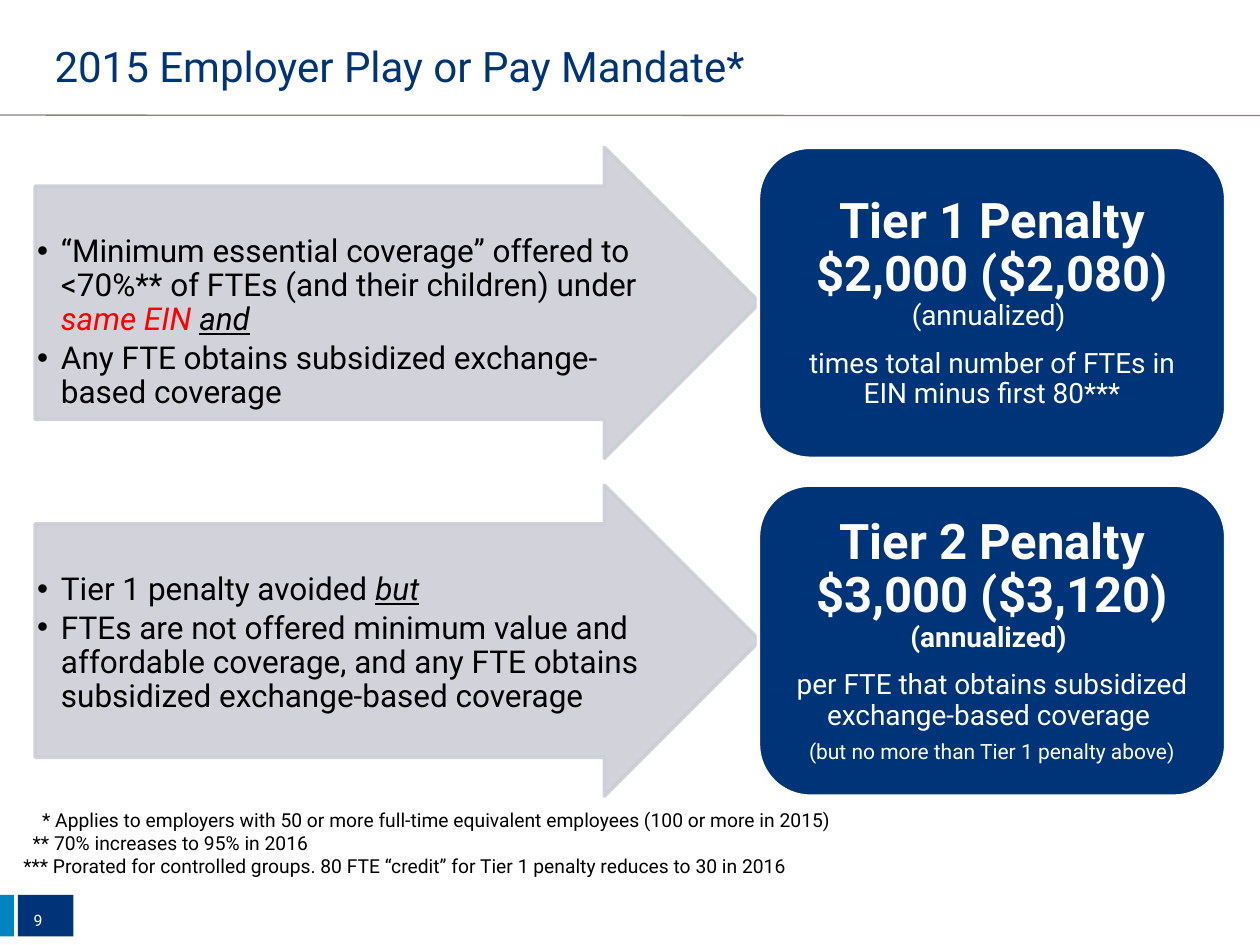
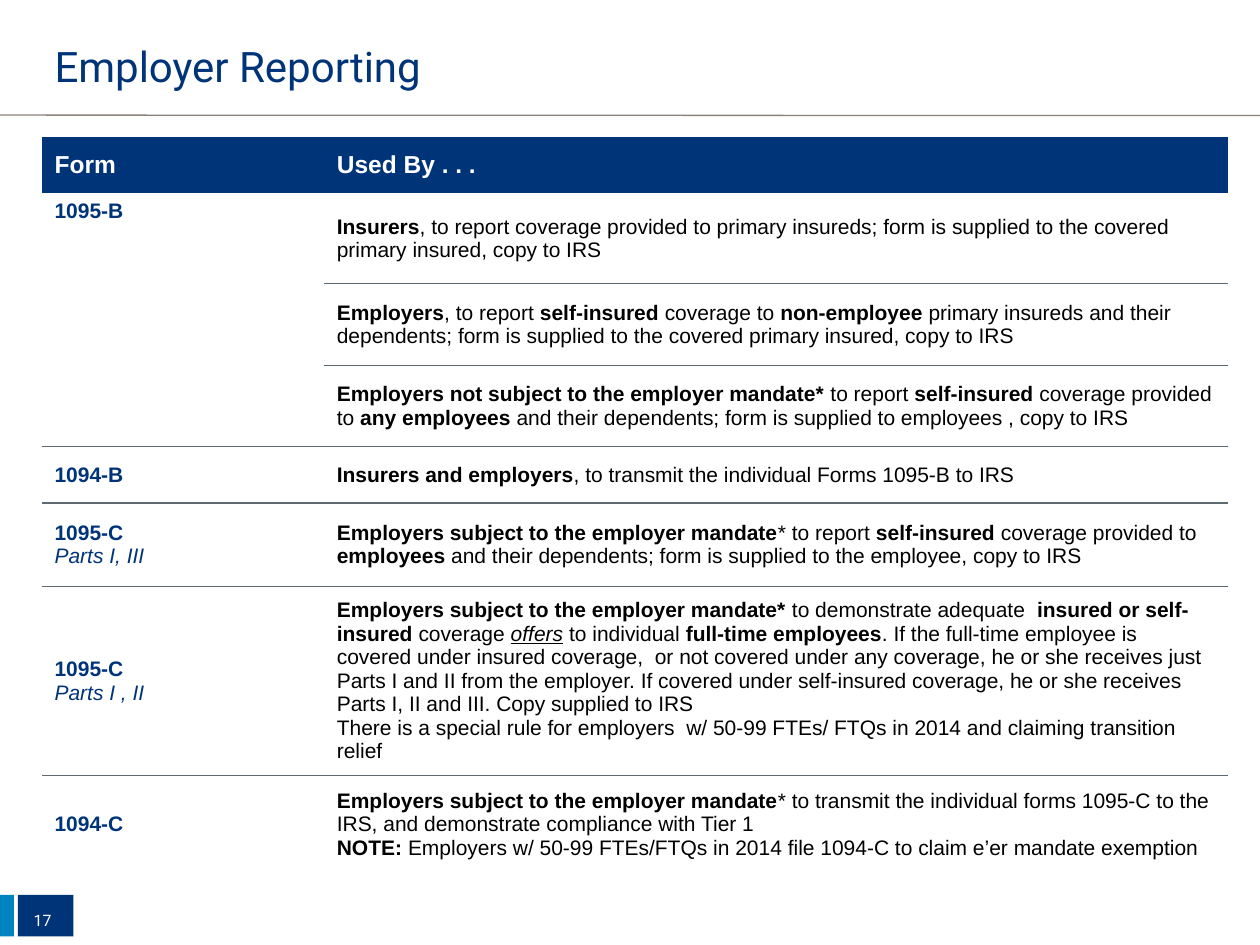
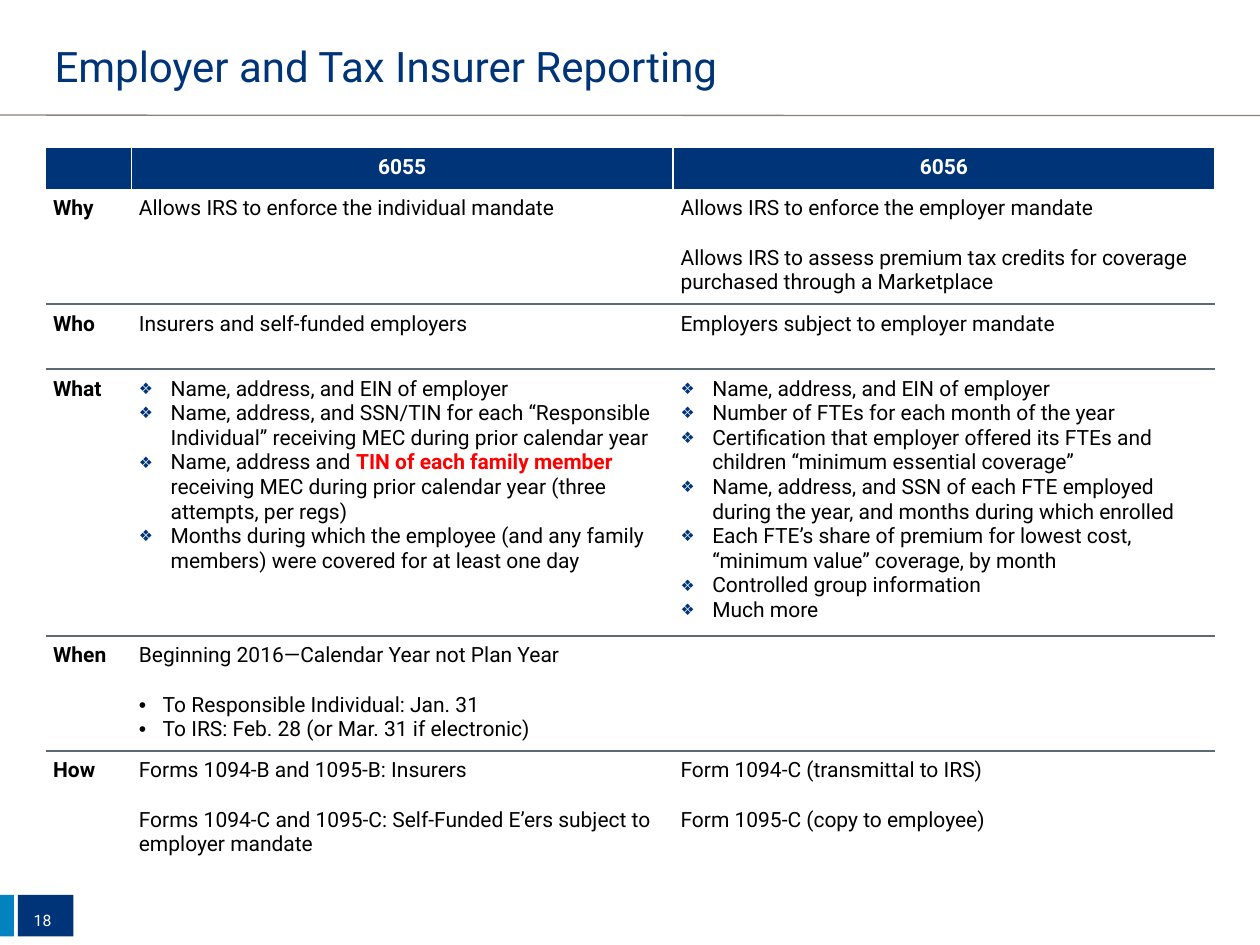
from dataclasses import dataclass, field
from typing import Any, NamedTuple, Optional

from lxml.etree import SubElement
from pptx import Presentation
from pptx.dml.color import RGBColor
from pptx.enum.shapes import MSO_CONNECTOR, MSO_SHAPE
from pptx.enum.text import MSO_ANCHOR, PP_ALIGN
from pptx.oxml.ns import qn
from pptx.util import Cm, Pt

NAVY, BLUE, GREY, TAUPE, SLATE = "003478", "0083BE", "CCCED6", "8D817B", "5E6A71"
WHITE, BLACK, RED = "FFFFFF", "000000", "FF0000"
HEADING_FONT = "Roboto"
TABLE_FONT = "Arial"
NO_TABLE_STYLE = "{2D5ABB26-0587-4C30-8999-92F81FD0307C}"
BLANK_LINE = Pt(14)

BOLD = {"bold": True}
ITALIC = {"italic": True}
UNDERLINED = {"italic": True, "underline": True}


class Box(NamedTuple):
    left: float
    top: float
    width: float
    height: float


class Bullet(NamedTuple):
    character: str
    indent: float
    color: Optional[str] = None
    percent: int = 100


@dataclass(frozen=True)
class Run:
    text: str
    style: dict[str, Any] = field(default_factory=dict)


@dataclass(frozen=True)
class Paragraph:
    runs: list[Run]
    layout: dict[str, Any] = field(default_factory=dict)
    bullet: Optional[Bullet] = None
    left: float = 0


@dataclass(frozen=True)
class TableDesign:
    box: Box
    columns: list[float]
    rows: list[float]
    margins: tuple[float, float]
    anchor: MSO_ANCHOR
    font: str
    header: dict[str, Any]
    header_sides: bool = False


@dataclass(frozen=True)
class Tier:
    conditions: list[Paragraph]
    penalty: list[Paragraph]


DIAMOND = Bullet("❖", 0.64, NAVY, 75)
DOT = Bullet("•", 0.48)


def rgb(color: str) -> RGBColor:
    return RGBColor.from_string(color)


def line(text: str, bullet: Optional[Bullet] = None, left: float = 0,
         layout: Optional[dict[str, Any]] = None, **style: Any) -> Paragraph:
    return Paragraph([Run(text, style)], layout or {}, bullet, left)


def mixed(*parts: Any, bullet: Optional[Bullet] = None,
          layout: Optional[dict[str, Any]] = None) -> Paragraph:
    runs = [Run(part) if isinstance(part, str) else Run(*part) for part in parts]
    return Paragraph(runs, layout or {}, bullet)


def apply_format(target: Any, values: dict[str, Any]) -> None:
    for name, value in values.items():
        if name == "color":
            target.color.rgb = rgb(value)
        else:
            setattr(target, name, value)


def margins(horizontal: float, vertical: float) -> dict[str, Any]:
    return {"margin_left": Cm(horizontal), "margin_right": Cm(horizontal),
            "margin_top": Cm(vertical), "margin_bottom": Cm(vertical)}


def add_bullet(properties: Any, bullet: Bullet) -> None:
    properties.set("marL", str(Cm(bullet.indent)))
    properties.set("indent", str(-Cm(bullet.indent)))
    if bullet.color:
        color = SubElement(properties, qn("a:buClr"))
        SubElement(color, qn("a:srgbClr"), val=bullet.color)
    SubElement(properties, qn("a:buSzPct"), val=str(bullet.percent * 1000))
    SubElement(properties, qn("a:buFont"), typeface="Arial")
    SubElement(properties, qn("a:buChar"), char=bullet.character)


def write_text(frame: Any, content: list[Paragraph], base: dict[str, Any]) -> None:
    for index, item in enumerate(content):
        paragraph = frame.add_paragraph() if index else frame.paragraphs[0]
        apply_format(paragraph, item.layout)
        properties = paragraph._p.get_or_add_pPr()
        if item.bullet:
            add_bullet(properties, item.bullet)
        elif item.left:
            properties.set("marL", str(Cm(item.left)))
        for part in item.runs:
            for row, text in enumerate(part.text.split("\n")):
                if row:
                    paragraph.add_line_break()
                run = paragraph.add_run()
                run.text = text
                apply_format(run.font, base | part.style)
    for paragraph in frame.paragraphs:
        ending = SubElement(paragraph._p, qn("a:endParaRPr"), sz=str(int(base["size"].pt * 100)))
        SubElement(ending, qn("a:latin"), typeface=base["name"])


def add_text(slide: Any, box: Box, content: list[Paragraph], base: dict[str, Any],
             anchor: MSO_ANCHOR = MSO_ANCHOR.TOP) -> Any:
    frame = slide.shapes.add_textbox(*map(Cm, box)).text_frame
    apply_format(frame, {"word_wrap": True, "vertical_anchor": anchor})
    write_text(frame, content, {"name": HEADING_FONT} | base)
    return frame


def add_block(slide: Any, kind: MSO_SHAPE, box: Box, fill: str,
              outline: Optional[str] = None) -> Any:
    shape = slide.shapes.add_shape(kind, *map(Cm, box))
    shape.shadow.inherit = False
    shape.fill.solid()
    shape.fill.fore_color.rgb = rgb(fill)
    if outline:
        apply_format(shape.line, {"color": outline, "width": Pt(2)})
    else:
        shape.line.fill.background()
    return shape


def start_slide(presentation: Any, title: str, number: int) -> Any:
    slide = presentation.slides.add_slide(presentation.slide_layouts[6])
    add_block(slide, MSO_SHAPE.RECTANGLE, Box(0.36, 18.04, 1.12, 0.84), NAVY)
    add_block(slide, MSO_SHAPE.RECTANGLE, Box(0, 18.04, 0.28, 0.84), BLUE)
    rule = slide.shapes.add_connector(
        MSO_CONNECTOR.STRAIGHT, Cm(0), Cm(2.32), Cm(25.4), Cm(2.33))
    apply_format(rule.line, {"color": TAUPE, "width": Pt(0.75)})
    SubElement(rule._element.spPr, qn("a:effectLst"))
    add_text(slide, Box(0.85, 0.54, 23.29, 1.57), [line(title)],
             {"size": Pt(24), "color": NAVY}, MSO_ANCHOR.MIDDLE)
    add_text(slide, Box(0.43, 18.05, 1.07, 1.02), [line(str(number))],
             {"size": Pt(9), "color": WHITE}, MSO_ANCHOR.MIDDLE)
    return slide


def add_tier(slide: Any, tier: Tier, top: float) -> None:
    arrow = add_block(slide, MSO_SHAPE.RIGHT_ARROW, Box(0.71, top, 14.61, 6.27), GREY, GREY)
    arrow.adjustments[0], arrow.adjustments[1] = 0.75, 0.5
    for color in arrow._element.spPr.iter(qn("a:srgbClr")):
        SubElement(color, qn("a:alpha"), val="90000")
    conditions = add_text(slide, Box(0.72, top + 1.75, 12.27, 3.74), tier.conditions,
                          {"size": Pt(18), "color": BLACK})
    apply_format(conditions, margins(0.03, 0.03))

    card = add_block(slide, MSO_SHAPE.ROUNDED_RECTANGLE, Box(15.29, top, 9.42, 6.27), NAVY, WHITE)
    apply_format(card.text_frame, margins(0.3, 0.15) | {
        "word_wrap": True, "vertical_anchor": MSO_ANCHOR.MIDDLE})
    write_text(card.text_frame, tier.penalty,
               {"name": HEADING_FONT, "size": Pt(16), "color": WHITE})


def add_border(cell: Any, side: str, color: str) -> None:
    properties = cell._tc.get_or_add_tcPr()
    border = properties.makeelement(qn(f"a:{side}"), {"w": str(Pt(1))})
    fill = SubElement(border, qn("a:solidFill"))
    SubElement(fill, qn("a:srgbClr"), val=color)
    properties.insert(len(properties.findall("*")) - 1, border)


def add_table(slide: Any, design: TableDesign, cells: list[list[list[Paragraph]]],
              merged: tuple[tuple[int, int], tuple[int, int]]) -> Any:
    table = slide.shapes.add_table(
        len(design.rows), len(design.columns), *map(Cm, design.box)).table
    apply_format(table, {"first_row": False, "horz_banding": False})
    table._tbl.tblPr.find(qn("a:tableStyleId")).text = NO_TABLE_STYLE
    for column, width in zip(table.columns, design.columns):
        column.width = Cm(width)
    for row, height in zip(table.rows, design.rows):
        row.height = Cm(height)
    first, last = merged
    table.cell(*first).merge(table.cell(*last))
    body = {"name": design.font, "size": Pt(12), "color": BLACK}
    for row_index, row in enumerate(cells):
        for column_index, content in enumerate(row):
            cell = table.cell(row_index, column_index)
            header = row_index == 0
            write_text(cell.text_frame, content, body | design.header if header else body)
            if cell.is_spanned:
                continue
            apply_format(cell, margins(*design.margins) | {"vertical_anchor": design.anchor})
            cell.fill.solid()
            cell.fill.fore_color.rgb = rgb(NAVY if header else WHITE)
            if header and design.header_sides:
                for side in ("lnL", "lnR", "lnT"):
                    add_border(cell, side, WHITE)
            elif row_index > 1:
                add_border(cell, "lnT", SLATE)
    return table


def condition(*parts: Any) -> Paragraph:
    return mixed(*parts, bullet=DOT, layout={
        "alignment": PP_ALIGN.LEFT, "line_spacing": 0.9, "space_after": Pt(2.5)})


def penalty(*parts: Any, after: float = 0) -> Paragraph:
    return mixed(*parts, layout={
        "alignment": PP_ALIGN.CENTER, "line_spacing": 0.9, "space_after": Pt(after)})


def build_mandate(presentation: Any) -> None:
    slide = start_slide(presentation, "2015 Employer Play or Pay Mandate*", 9)
    amount = BOLD | {"size": Pt(28)}
    tiers = [
        Tier([condition("“Minimum essential coverage” offered to <70%** of FTEs "
                        "(and their children) under ",
                        ("same EIN ", ITALIC | {"color": RED}), ("and", UNDERLINED)),
              condition("Any FTE obtains subsidized exchange-based coverage")],
             [penalty(("Tier 1 Penalty\n$2,000 ($2,080)\n", amount), "(annualized) ", after=9.8),
              penalty("times total number of FTEs in EIN minus first 80***")]),
        Tier([condition("Tier 1 penalty avoided ", ("but", UNDERLINED)),
              condition("FTEs are not offered minimum value and affordable coverage, "
                        "and any FTE obtains subsidized exchange-based coverage")],
             [penalty(("Tier 2 Penalty\n$3,000 ($3,120)\n", amount),
                      ("(annualized) ", BOLD), after=9.8),
              penalty("per FTE that obtains subsidized exchange-based coverage ", after=5.6),
              penalty(("(but no more than Tier 1 penalty above)", {"size": Pt(12)}))]),
    ]
    for index, tier in enumerate(tiers):
        add_tier(slide, tier, 2.97 + index * 6.81)
    add_text(slide, Box(0.22, 16.16, 20.52, 1.68), [
        line("* Applies to employers with 50 or more full-time equivalent employees "
             "(100 or more in 2015)", left=0.38),
        line("** 70% increases to 95% in 2016", left=0.19),
        line("*** Prorated for controlled groups. 80 FTE “credit” for Tier 1 penalty "
             "reduces to 30 in 2016"),
    ], {"size": Pt(11), "color": BLACK})


def form(name: str, parts: str = "") -> list[Paragraph]:
    name_line = line(name, bold=True, color=NAVY)
    return [name_line, line(parts, italic=True, color=NAVY)] if parts else [name_line]


def build_forms(presentation: Any) -> None:
    slide = start_slide(presentation, "Employer Reporting", 17)
    design = TableDesign(
        Box(0.85, 2.76, 23.9, 14.66), [5.69, 18.21],
        [1.14, 1.82, 1.65, 1.63, 1.14, 1.68, 3.63, 1.96],
        (0.25, 0.13), MSO_ANCHOR.MIDDLE, TABLE_FONT,
        BOLD | {"size": Pt(14), "color": WHITE})
    subject = "Employers subject to the employer mandate"
    self_insured = ("self-insured ", BOLD)
    cells = [
        [[line("Form")], [line("Used By . . .")]],
        [form("1095-B"), [mixed(
            ("Insurers", BOLD), ", to report coverage provided to primary insureds; form is "
            "supplied to the covered primary insured, copy to IRS")]],
        [[], [mixed(
            ("Employers", BOLD), ", to report ", self_insured, "coverage to ",
            ("non-employee", BOLD), " primary insureds and their dependents; form is supplied "
            "to the covered primary insured, copy to IRS")]],
        [[], [mixed(
            ("Employers not subject to the employer mandate* ", BOLD), "to report ",
            self_insured, "coverage provided to ", ("any employees ", BOLD),
            "and their dependents; form is supplied to employees , copy to IRS")]],
        [form("1094-B"), [mixed(
            ("Insurers and employers", BOLD),
            ", to transmit the individual Forms 1095-B to IRS")]],
        [form("1095-C", "Parts I, III"), [mixed(
            (subject, BOLD), "* to report ", self_insured, "coverage provided to ",
            ("employees", BOLD), " and their dependents; form is supplied to the employee, "
            "copy to IRS")]],
        [form("1095-C", "Parts I , II"), [
            mixed((subject + "* ", BOLD), "to demonstrate adequate  ",
                  ("insured or self-insured ", BOLD), "coverage ", ("offers", UNDERLINED),
                  " to individual ", ("full-time employees", BOLD),
                  ". If the full-time employee is covered under insured coverage,  or not "
                  "covered under any coverage, he or she receives just Parts I and II from the "
                  "employer. If covered under self-insured coverage, he or she receives "
                  "Parts I, II and III. Copy supplied to IRS"),
            line("There is a special rule for employers  w/ 50-99 FTEs/ FTQs in 2014 and "
                 "claiming transition relief")]],
        [form("1094-C"), [
            mixed((subject, BOLD), "* to transmit the individual forms 1095-C to the IRS, "
                  "and demonstrate compliance with Tier 1"),
            mixed(("NOTE: ", BOLD), "Employers w/ 50-99 FTEs/FTQs in 2014 file 1094-C to "
                  "claim e’er mandate exemption")]],
    ]
    table = add_table(slide, design, cells, ((1, 0), (3, 0)))
    table.cell(1, 0).vertical_anchor = MSO_ANCHOR.TOP


def build_comparison(presentation: Any) -> None:
    slide = start_slide(presentation, "Employer and Tax Insurer Reporting", 18)
    design = TableDesign(
        Box(0.92, 2.97, 23.57, 13.73), [1.73, 10.92, 10.92],
        [0.84, 2.11, 1.31, 5.08, 2.11, 2.11],
        (0.15, 0.15), MSO_ANCHOR.TOP, HEADING_FONT,
        BOLD | {"color": WHITE}, header_sides=True)
    centred = {"alignment": PP_ALIGN.CENTER}
    spaced = {"space_before": BLANK_LINE}
    insurer_items = [
        line("Name, address, and EIN of employer", DIAMOND),
        line("Name, address, and SSN/TIN for each “Responsible Individual” receiving MEC "
             "during prior calendar year", DIAMOND),
        mixed("Name, address and ", ("TIN of each family member ", BOLD | {"color": RED}),
              "receiving MEC during prior calendar year (three attempts, per regs)",
              bullet=DIAMOND),
        line("Months during which the employee (and any family members) were covered for "
             "at least one day", DIAMOND),
    ]
    employer_items = [line(text, DIAMOND) for text in (
        "Name, address, and EIN of employer",
        "Number of FTEs for each month of the year",
        "Certification that employer offered its FTEs and children “minimum essential coverage”",
        "Name, address, and SSN of each FTE employed during the year, and months during "
        "which enrolled",
        "Each FTE’s share of premium for lowest cost, “minimum value” coverage, by month",
        "Controlled group information",
        "Much more",
    )]
    questions = {
        "Why": [[line("Allows IRS to enforce the individual mandate")],
                [line("Allows IRS to enforce the employer mandate"),
                 line("Allows IRS to assess premium tax credits for coverage purchased "
                      "through a Marketplace", layout=spaced)]],
        "Who": [[line("Insurers and self-funded employers")],
                [line("Employers subject to employer mandate")]],
        "What": [insurer_items, employer_items],
        "When": [[line("Beginning 2016—Calendar Year not Plan Year"),
                  line("To Responsible Individual: Jan. 31", DOT, layout=spaced),
                  line("To IRS: Feb. 28 (or Mar. 31 if electronic)", DOT)], []],
        "How": [[line("Forms 1094-B and 1095-B: Insurers"),
                 line("Forms 1094-C and 1095-C: Self-Funded E’ers subject to employer mandate",
                      layout=spaced)],
                [line("Form 1094-C (transmittal to IRS)"),
                 line("Form 1095-C (copy to employee)", layout=spaced)]],
    }
    cells = [[[], [line("6055", layout=centred)], [line("6056", layout=centred)]]]
    cells += [[[line(question, bold=True)], *answers] for question, answers in questions.items()]
    add_table(slide, design, cells, ((4, 1), (4, 2)))


def main() -> None:
    presentation = Presentation()
    apply_format(presentation, {"slide_width": Cm(25.4), "slide_height": Cm(19.05)})
    build_mandate(presentation)
    build_forms(presentation)
    build_comparison(presentation)
    presentation.save("out.pptx")


if __name__ == "__main__":
    main()
